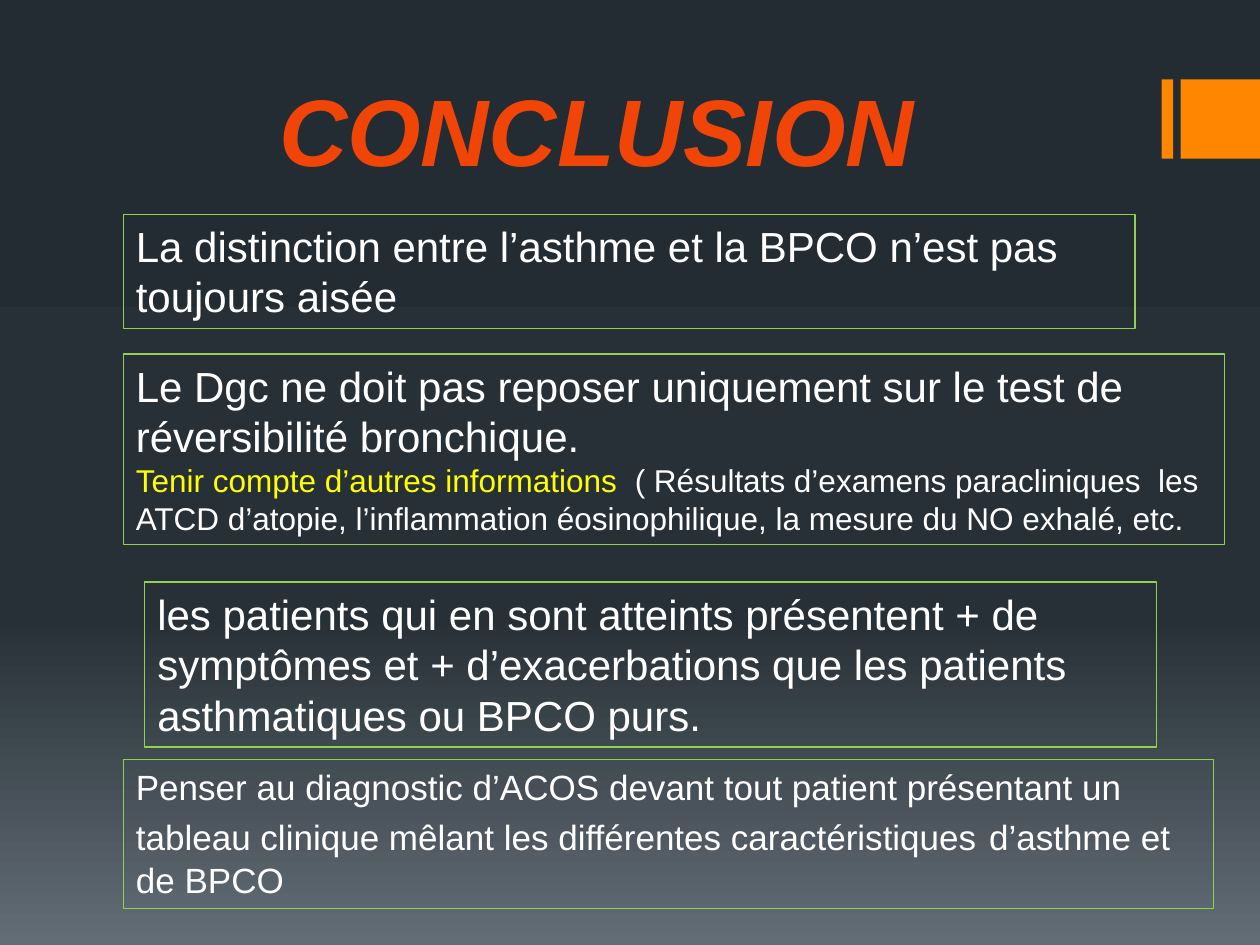
import copy

import pptx
import pptx.dml.color
import pptx.enum.shapes
import pptx.enum.text
import pptx.util
from pptx.util import Inches

WHITE = "FFFFFF"
YELLOW = "FFFF00"
ORANGE = "FF8600"
GREEN = "92D050"
TITLE_RED = "F04507"
BACKGROUND_STOPS = [(0, "242C33"), (0.65, "273037"), (1, "636D76")]

STATEMENTS = [
    ((0.98, 1.7, 8.03, 0.91), [
        [("La distinction entre l’asthme et la BPCO n’est pas toujours aisée", 24, WHITE)],
    ]),
    ((0.98, 2.81, 8.74, 1.51), [
        [("Le Dgc ne doit pas reposer uniquement sur le test de réversibilité bronchique.", 24, WHITE)],
        [("Tenir compte d’autres informations  ", 18, YELLOW),
         ("( Résultats d’examens paracliniques  les ATCD d’atopie, l’inflammation "
          "éosinophilique, la mesure du NO exhalé, etc.", 18, WHITE)],
    ]),
    ((1.15, 4.62, 8.03, 1.31), [
        [("les patients qui en sont atteints présentent + de symptômes et + d’exacerbations "
          "que les patients asthmatiques ou BPCO purs.", 24, WHITE)],
    ]),
    ((0.98, 6.03, 8.65, 1.18), [
        [("Penser au diagnostic d’ACOS devant tout patient présentant un tableau clinique "
          "mêlant les différentes caractéristiques", 20, WHITE),
         (" ", 24, WHITE),
         ("d’asthme et de BPCO", 20, WHITE)],
    ]),
]


def color(value):
    return pptx.dml.color.RGBColor.from_string(value)


def set_background(slide):
    fill = slide.background.fill
    fill.gradient()
    fill.gradient_angle = 270
    stop_list = slide.element.xpath(".//a:gsLst")[0]
    stop_list.append(copy.deepcopy(stop_list[-1]))
    for stop, (position, value) in zip(fill.gradient_stops, BACKGROUND_STOPS):
        stop.position = position
        stop.color.rgb = color(value)


def add_rectangle(slide, box, fill=None, line=None):
    shape = slide.shapes.add_shape(
        pptx.enum.shapes.MSO_SHAPE.RECTANGLE, *map(Inches, box))
    shape.shadow.inherit = False
    if fill:
        shape.fill.solid()
        shape.fill.fore_color.rgb = color(fill)
    else:
        shape.fill.background()
    if line:
        shape.line.color.rgb = color(line)
        shape.line.width = pptx.util.Pt(0.75)
    else:
        shape.line.fill.background()
    return shape


def add_text(paragraph, text, size=24, value=WHITE, bold=False, italic=False):
    run = paragraph.add_run()
    run.text = text
    run.font.name = "Arial"
    run.font.size = pptx.util.Pt(size)
    run.font.bold = bold
    run.font.italic = italic
    run.font.color.rgb = color(value)


def add_title(slide, text):
    title = slide.shapes.add_textbox(*map(Inches, (2.09, 0.52, 5.29, 1.01)))
    title.text_frame.word_wrap = False
    paragraph = title.text_frame.paragraphs[0]
    paragraph.alignment = pptx.enum.text.PP_ALIGN.CENTER
    add_text(paragraph, text, size=54, value=TITLE_RED, bold=True, italic=True)


def add_statement(slide, box, paragraphs):
    frame = add_rectangle(slide, box, line=GREEN).text_frame
    frame.word_wrap = True
    frame.vertical_anchor = pptx.enum.text.MSO_ANCHOR.TOP
    for index, runs in enumerate(paragraphs):
        paragraph = frame.add_paragraph() if index else frame.paragraphs[0]
        paragraph.alignment = pptx.enum.text.PP_ALIGN.LEFT
        for text, size, value in runs:
            add_text(paragraph, text, size=size, value=value)


def main():
    presentation = pptx.Presentation()
    presentation.slide_width = Inches(10)
    presentation.slide_height = Inches(7.5)
    slide = presentation.slides.add_slide(presentation.slide_layouts[6])
    set_background(slide)
    for left, width in [(9.22, 0.09), (9.37, 0.63)]:
        add_rectangle(slide, (left, 0.63, width, 0.63), fill=ORANGE)
    add_title(slide, "CONCLUSION")
    for box, paragraphs in STATEMENTS:
        add_statement(slide, box, paragraphs)
    presentation.save("out.pptx")


if __name__ == "__main__":
    main()
